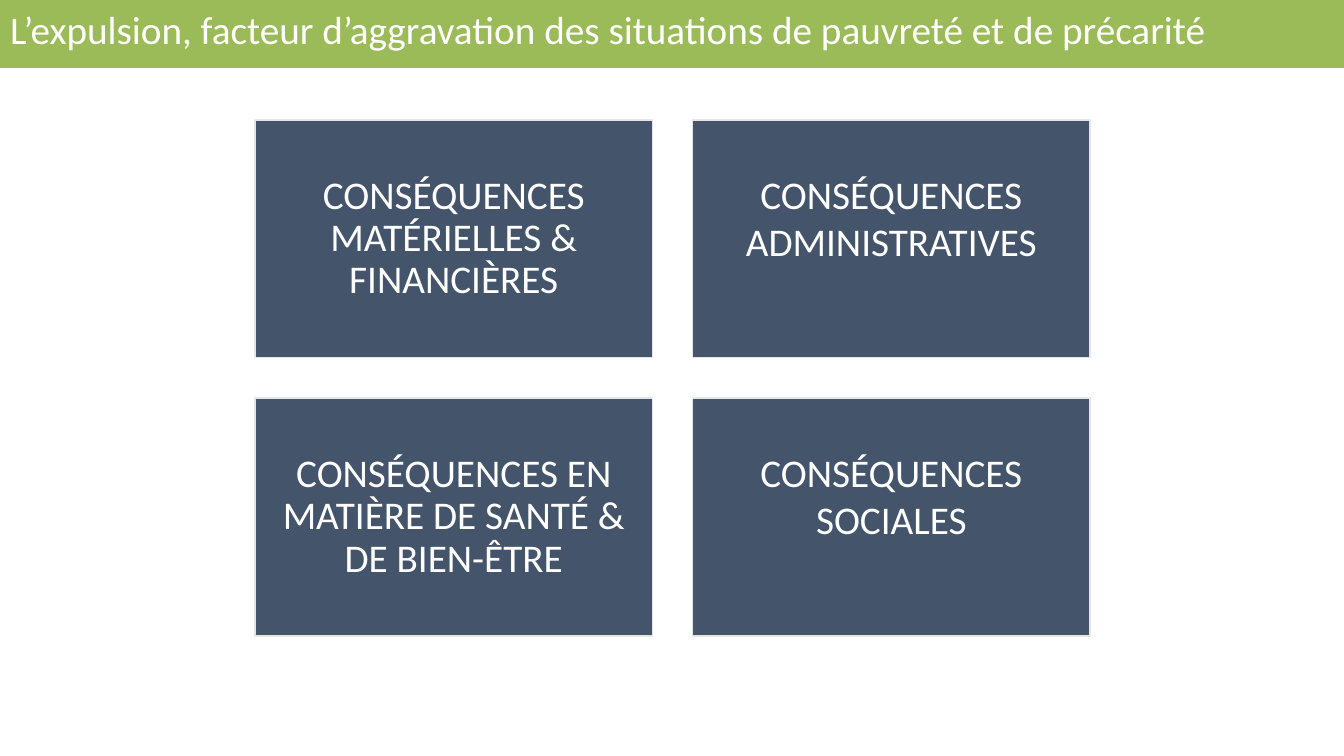
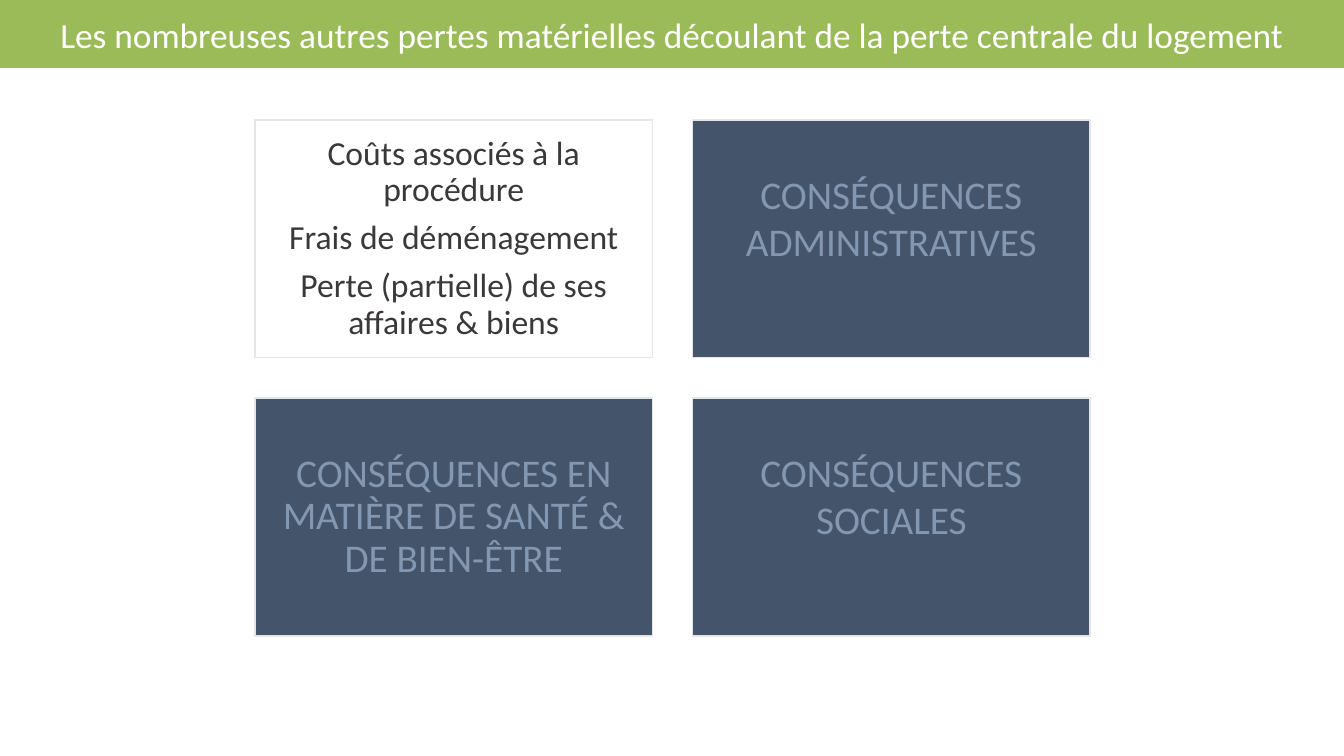
from pptx import Presentation
from pptx.dml.color import RGBColor
from pptx.enum import shapes, text
from pptx.util import Inches, Pt

# Shared style
WIDE, HIGH = 13.33, 7.5
FONT = "Calibri"
GREEN, WHITE, NAVY = "9BBB59", "FFFFFF", "44546A"
EDGE, DIM, DARK = "E7E6E6", "8497B0", "3B3838"
BAND = 0.09  # share of the slide height

# Grid of boxes
LEFT, TOP = 2.53, 1.19
BOX_W, BOX_H, GAP = 3.94, 2.36, 0.4
COLS = 2

# Content: box = paragraphs, line spacing, extra room below the text
MONEY = (["CONSÉQUENCES MATÉRIELLES & FINANCIÈRES"], 0.9, 0)
ADMIN = (["CONSÉQUENCES ADMINISTRATIVES"], 1, 0.43)
HEALTH = (["CONSÉQUENCES EN MATIÈRE DE SANTÉ & DE BIEN-ÊTRE"], 0.9, 0)
SOCIAL = (["CONSÉQUENCES SOCIALES"], 1, 0.43)
COSTS = ([
    "Coûts associés à la procédure",
    "Frais de déménagement",
    "Perte (partielle) de ses affaires & biens",
], 0.9, 0)

# Box looks: fill, text colour, size, inset
BRIGHT = (NAVY, WHITE, 28, 0.12)
FADED = (NAVY, DIM, 28, 0.12)
OPEN = (None, DARK, 24, 0.1)

SLIDES = [
    {
        "title": "L’expulsion, facteur d’aggravation des situations de pauvreté et de précarité",
        "size": 28, "height": 0.64, "align": text.PP_ALIGN.LEFT,
        "boxes": [(MONEY, BRIGHT), (ADMIN, BRIGHT), (HEALTH, BRIGHT), (SOCIAL, BRIGHT)],
    },
    {
        "title": "Les nombreuses autres pertes matérielles découlant de la perte centrale du logement",
        "size": 25.2, "height": 0.74, "align": text.PP_ALIGN.CENTER,
        "boxes": [(COSTS, OPEN), (ADMIN, FADED), (HEALTH, FADED), (SOCIAL, FADED)],
    },
]


def rgb(code):
    return RGBColor.from_string(code)


def style(par, size, color, align, space):
    par.alignment, par.line_spacing = align, space
    for run in par.runs:
        run.font.name, run.font.size = FONT, Pt(size)
        run.font.color.rgb = rgb(color)


def paint_band(master):
    fill = master.background.fill
    fill.gradient()
    fill.gradient_angle = 270
    for stop, color in zip(fill.gradient_stops, (GREEN, WHITE)):
        stop.position = BAND
        stop.color.rgb = rgb(color)


def add_title(slide, data):
    title = slide.shapes.title
    title.left = title.top = 0
    title.width, title.height = Inches(WIDE), Inches(data["height"])
    frame = title.text_frame
    frame.text = data["title"]
    frame.auto_size = text.MSO_AUTO_SIZE.NONE
    frame.vertical_anchor = text.MSO_ANCHOR.MIDDLE
    style(frame.paragraphs[0], data["size"], WHITE, data["align"], 0.9)


def add_box(slide, index, words, look):
    lines, space, room = words
    fill, color, size, inset = look
    row, col = divmod(index, COLS)
    box = slide.shapes.add_shape(
        shapes.MSO_SHAPE.RECTANGLE,
        Inches(LEFT + col * (BOX_W + GAP)), Inches(TOP + row * (BOX_H + GAP)),
        Inches(BOX_W), Inches(BOX_H))
    box.shadow.inherit = False
    if fill:
        box.fill.solid()
        box.fill.fore_color.rgb = rgb(fill)
    else:
        box.fill.background()
    box.line.color.rgb, box.line.width = rgb(EDGE), Pt(1)

    frame = box.text_frame
    frame.word_wrap = True
    frame.vertical_anchor = text.MSO_ANCHOR.MIDDLE
    frame.margin_left = frame.margin_right = frame.margin_top = Inches(inset)
    frame.margin_bottom = Inches(inset + room)
    frame.text = "\n".join(lines)
    for par in frame.paragraphs:
        style(par, size, color, text.PP_ALIGN.CENTER, space)
        par.space_after = Pt(size * 0.35)


def main():
    prs = Presentation()
    prs.slide_width, prs.slide_height = Inches(WIDE), Inches(HIGH)
    paint_band(prs.slide_master)
    layout = prs.slide_layouts.get_by_name("Title Only")
    for data in SLIDES:
        slide = prs.slides.add_slide(layout)
        add_title(slide, data)
        for index, (words, look) in enumerate(data["boxes"]):
            add_box(slide, index, words, look)
    prs.save("out.pptx")


if __name__ == "__main__":
    main()
